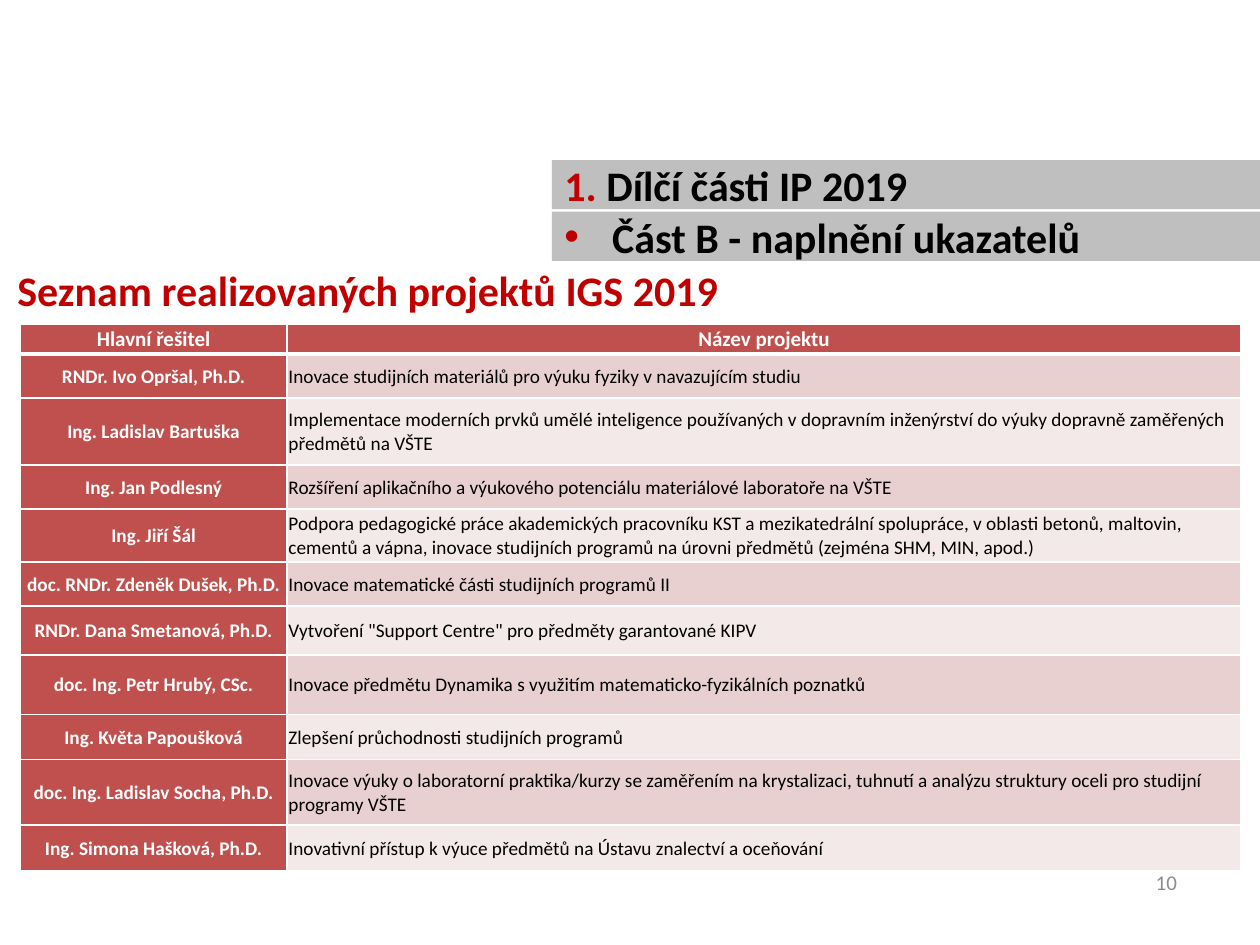
import pptx
import pptx.dml.color
import pptx.enum.shapes
import pptx.enum.text
import pptx.oxml
import pptx.oxml.ns
import pptx.util
from pptx.util import Inches

ALIGN = pptx.enum.text.PP_ALIGN
MIDDLE = pptx.enum.text.MSO_ANCHOR.MIDDLE
RED, DARK_RED, GREY, WHITE, BLACK = "C0504D", "C00000", "BFBFBF", "FFFFFF", "000000"
BAND_FILLS = ["E8D0D0", "F4E9E9"]
ROW_HEIGHTS = [0.24, 0.35, 0.53, 0.35, 0.42, 0.35, 0.39, 0.47, 0.36, 0.52, 0.36]
COLUMN_WIDTHS = [2.12, 7.57]
HEADER = ("Hlavní řešitel", "Název projektu")
PROJECTS = [
    ("RNDr. Ivo Opršal, Ph.D.", "Inovace studijních materiálů pro výuku fyziky v navazujícím studiu"),
    ("Ing. Ladislav Bartuška", "Implementace moderních prvků umělé inteligence používaných v dopravním "
     "inženýrství do výuky dopravně zaměřených předmětů na VŠTE"),
    ("Ing. Jan Podlesný", "Rozšíření aplikačního a výukového potenciálu materiálové laboratoře na VŠTE"),
    ("Ing. Jiří Šál", "Podpora pedagogické práce akademických pracovníku KST a mezikatedrální "
     "spolupráce, v oblasti betonů, maltovin, cementů a vápna, inovace studijních programů "
     "na úrovni předmětů (zejména SHM, MIN, apod.)"),
    ("doc. RNDr. Zdeněk Dušek, Ph.D.", "Inovace matematické části studijních programů II"),
    ("RNDr. Dana Smetanová, Ph.D.", 'Vytvoření "Support Centre" pro předměty garantované KIPV'),
    ("doc. Ing. Petr Hrubý, CSc.", "Inovace předmětu Dynamika s využitím matematicko-fyzikálních poznatků"),
    ("Ing. Květa Papoušková", "Zlepšení průchodnosti studijních programů"),
    ("doc. Ing. Ladislav Socha, Ph.D.", "Inovace výuky o laboratorní praktika/kurzy se zaměřením na "
     "krystalizaci, tuhnutí a analýzu struktury oceli pro studijní programy VŠTE"),
    ("Ing. Simona Hašková, Ph.D.", "Inovativní přístup k výuce předmětů na Ústavu znalectví a oceňování"),
]


def rgb(value):
    return pptx.dml.color.RGBColor.from_string(value)


def set_all(target, values):
    for key, value in values.items():
        setattr(target, key, value)


def write(paragraph, pieces, size, bold=False, align=ALIGN.LEFT):
    paragraph.alignment = align
    for words, color in pieces:
        run = paragraph.add_run()
        run.text = words
        set_all(run.font, {"name": "Calibri", "size": pptx.util.Pt(size), "bold": bold})
        run.font.color.rgb = rgb(color)


def add_label(slide, box, words, color, size, **style):
    label = slide.shapes.add_textbox(*map(Inches, box)).text_frame
    label.word_wrap = True
    write(label.paragraphs[0], [(words, color)], size, **style)
    return label


def add_banner(slide, box, pieces, indent, bullet=None):
    banner = slide.shapes.add_shape(pptx.enum.shapes.MSO_SHAPE.RECTANGLE, *map(Inches, box))
    banner.shadow.inherit = False
    banner.fill.solid()
    banner.fill.fore_color.rgb = rgb(GREY)
    banner.line.fill.background()
    set_all(banner.text_frame, {"word_wrap": True, "vertical_anchor": MIDDLE})
    paragraph = banner.text_frame.paragraphs[0]
    properties = paragraph._p.get_or_add_pPr()
    properties.set("marL", str(Inches(indent)))
    properties.set("indent", str(-Inches(indent)))
    if bullet:
        namespace = pptx.oxml.ns.nsdecls("a")
        for xml in (
            f'<a:buClr {namespace}><a:srgbClr val="{DARK_RED}"/></a:buClr>',
            f'<a:buFont {namespace} typeface="Arial"/>',
            f'<a:buChar {namespace} char="{bullet}"/>',
        ):
            properties.append(pptx.oxml.parse_xml(xml))
    write(paragraph, pieces, 24, bold=True)


def set_borders(cell, widths):
    for side, width in widths.items():
        cell._tc.get_or_add_tcPr().append(pptx.oxml.parse_xml(
            f'<a:ln{side} {pptx.oxml.ns.nsdecls("a")} w="{pptx.util.Pt(width)}">'
            f'<a:solidFill><a:srgbClr val="{WHITE}"/></a:solidFill></a:ln{side}>'
        ))


def add_projects(slide, box):
    rows = [HEADER] + PROJECTS
    projects = slide.shapes.add_table(len(rows), len(HEADER), *map(Inches, box)).table
    projects.horz_banding = False
    for column, width in zip(projects.columns, COLUMN_WIDTHS):
        column.width = Inches(width)
    for r, (row, height) in enumerate(zip(rows, ROW_HEIGHTS)):
        projects.rows[r].height = Inches(height)
        header = r == 0
        side, top = (0.07, 0) if header else (0.01, 0.01)
        for c, words in enumerate(row):
            cell = projects.cell(r, c)
            strong = header or c == 0
            set_all(cell, {
                "margin_left": Inches(side), "margin_right": Inches(side),
                "margin_top": Inches(top), "margin_bottom": 0, "vertical_anchor": MIDDLE,
            })
            set_borders(cell, {"L": 1, "R": 1, "T": 3 if r == 1 else 1, "B": 3 if header else 1})
            cell.fill.solid()
            cell.fill.fore_color.rgb = rgb(RED if strong else BAND_FILLS[(r - 1) % 2])
            write(cell.text_frame.paragraphs[0], [(words, WHITE if strong else BLACK)],
                  12 if header else 11, strong, ALIGN.CENTER if strong else ALIGN.LEFT)


def main():
    deck = pptx.Presentation()
    set_all(deck, {"slide_width": Inches(10), "slide_height": Inches(7.5)})
    slide = deck.slides.add_slide(deck.slide_layouts[6])
    number = add_label(slide, (7.11, 6.8, 2.33, 0.4), "10", "8C8C8C", 12, align=ALIGN.RIGHT)
    number.vertical_anchor = MIDDLE
    add_projects(slide, (0.16, 2.57, sum(COLUMN_WIDTHS), sum(ROW_HEIGHTS)))
    add_label(slide, (0.04, 2.05, 9, 0.64), "Seznam realizovaných projektů IGS 2019",
              DARK_RED, 24, bold=True)
    add_banner(slide, (4.38, 1.68, 5.62, 0.39), [("Část B - naplnění ukazatelů", BLACK)], 0.38, "•")
    add_banner(slide, (4.38, 1.27, 5.62, 0.39),
               [("1. ", DARK_RED), ("Dílčí části IP 2019", BLACK)], 0.39)
    deck.save("out.pptx")


if __name__ == "__main__":
    main()
